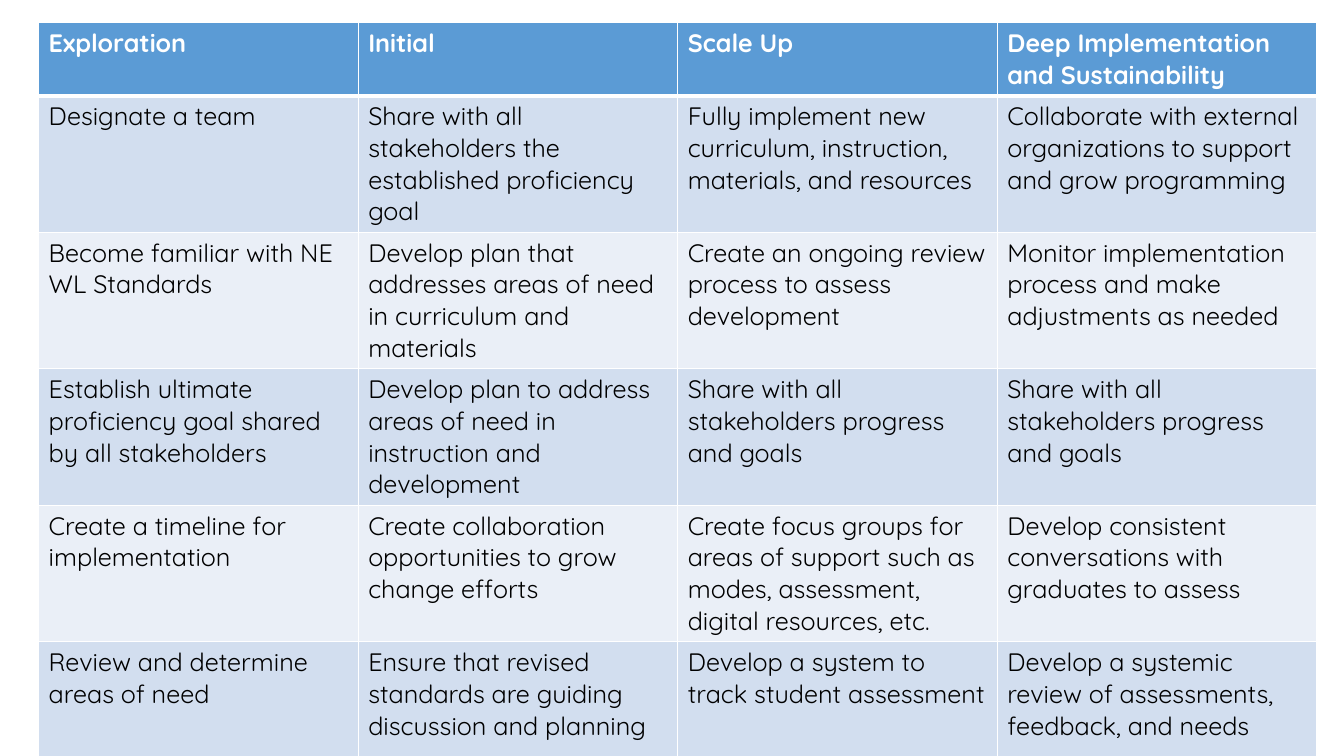
from pptx import Presentation
from pptx.dml.color import RGBColor as Color
from pptx.oxml.xmlchemy import OxmlElement as Element
from pptx.util import Pt

COLORS = {
    "white": "FFFFFF",
    "black": "000000",
    "header": "5B9BD5",
    "odd": "D2DEEF",
    "even": "EAEFF7",
}
FONT = "Quicksand"
STAGES = [
    ["Exploration", "Initial", "Scale Up", "Deep Implementation and Sustainability"],
    [
        "Designate a team",
        "Share with all stakeholders the established proficiency goal",
        "Fully implement new curriculum, instruction, materials, and resources",
        "Collaborate with external organizations to support and grow programming",
    ],
    [
        "Become familiar with NE WL Standards",
        "Develop plan that addresses areas of need in curriculum and materials",
        "Create an ongoing review process to assess development",
        "Monitor implementation process and make adjustments as needed",
    ],
    [
        "Establish ultimate proficiency goal shared by all stakeholders",
        "Develop plan to address areas of need in instruction and development",
        "Share with all stakeholders progress and goals",
        "Share with all stakeholders progress and goals",
    ],
    [
        "Create a timeline for implementation",
        "Create collaboration opportunities to grow change efforts",
        "Create focus groups for areas of support such as modes, assessment, digital resources, etc.",
        "Develop consistent conversations with graduates to assess",
    ],
    [
        "Review and determine areas of need",
        "Ensure that revised standards are guiding discussion and planning",
        "Develop a system to track student assessment",
        "Develop a systemic review of assessments, feedback, and needs",
    ],
]
ROW_HEIGHTS = [49, 90.7, 90.7, 90.7, 90.7, 85.7]


def write(frame, text, *, size=18, color="black", bold=False):
    span = frame.paragraphs[0].add_run()
    span.text = text
    span.font.name = FONT
    span.font.size = Pt(size)
    span.font.bold = bold
    span.font.color.rgb = Color.from_string(COLORS[color])


class StageSlide:
    def __init__(self, deck):
        self.page = deck.slides.add_slide(deck.slide_layouts[6])

    def border(self, cell, side, width):
        line = Element(f"a:ln{side}")
        line.set("w", str(Pt(width)))
        fill = Element("a:solidFill")
        tone = Element("a:srgbClr")
        tone.set("val", COLORS["white"])
        fill.append(tone)
        line.append(fill)
        cell._tc.get_or_add_tcPr().append(line)

    def cell(self, cell, text, row):
        header = row == 0
        widths = {"L": 1, "R": 1, "T": 3 if row == 1 else 1, "B": 3 if header else 1}
        for side, width in widths.items():
            self.border(cell, side, width)
        band = "header" if header else "odd" if row % 2 else "even"
        cell.fill.solid()
        cell.fill.fore_color.rgb = Color.from_string(COLORS[band])
        write(cell.text_frame, text, color="white" if header else "black", bold=header)

    def table(self, rows, heights, left, top, width):
        frame = self.page.shapes.add_table(
            len(rows), len(rows[0]), Pt(left), Pt(top), Pt(width), Pt(sum(heights))
        )
        for row, (texts, height) in enumerate(zip(rows, heights)):
            frame.table.rows[row].height = Pt(height)
            for column, text in enumerate(texts):
                self.cell(frame.table.cell(row, column), text, row)


def main():
    deck = Presentation()
    deck.slide_width, deck.slide_height = Pt(960), Pt(540)
    StageSlide(deck).table(STAGES, ROW_HEIGHTS, left=27.6, top=16, width=913)
    deck.save("out.pptx")


if __name__ == "__main__":
    main()
